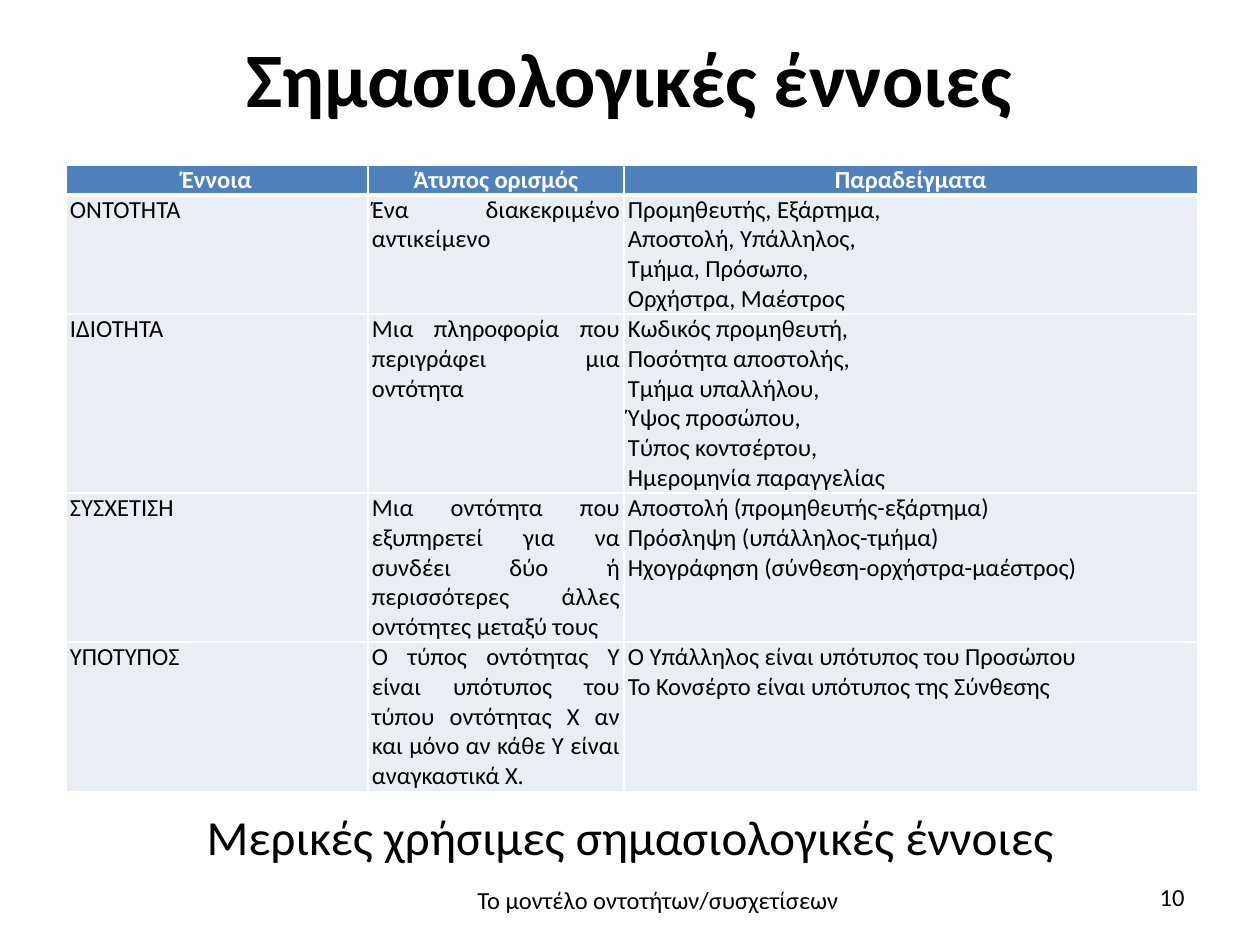
from lxml import etree
from pptx import Presentation
from pptx.dml.color import RGBColor
from pptx.enum.text import MSO_ANCHOR, MSO_AUTO_SIZE, PP_ALIGN
from pptx.oxml.ns import qn
from pptx.util import Pt

CENTER, RIGHT, JUSTIFY = PP_ALIGN.CENTER, PP_ALIGN.RIGHT, PP_ALIGN.JUSTIFY
TOP, MIDDLE = MSO_ANCHOR.TOP, MSO_ANCHOR.MIDDLE
NO_FIT = MSO_AUTO_SIZE.NONE
PX = 914400 // 126

BLACK, WHITE, HEADER_FILL, BODY_FILL = "000000", "FFFFFF", "4F81BD", "E9EDF4"
COL_WIDTHS = [302, 256, 574]
LINE_HEIGHT = 29

HEADERS = ["Έννοια", "Άτυπος ορισμός", "Παραδείγματα"]
CONCEPTS = [
    ("ΟΝΤΟΤΗΤΑ", "Ένα διακεκριμένο αντικείμενο",
     "Προμηθευτής, Εξάρτημα,\nΑποστολή, Υπάλληλος,\nΤμήμα, Πρόσωπο,\nΟρχήστρα, Μαέστρος"),
    ("ΙΔΙΟΤΗΤΑ", "Μια πληροφορία που περιγράφει μια οντότητα",
     "Κωδικός προμηθευτή,\nΠοσότητα αποστολής,\nΤμήμα υπαλλήλου,\nΎψος προσώπου,\n"
     "Τύπος κοντσέρτου,\nΗμερομηνία παραγγελίας"),
    ("ΣΥΣΧΕΤΙΣΗ",
     "Μια οντότητα που εξυπηρετεί για να συνδέει δύο ή περισσότερες άλλες οντότητες μεταξύ τους",
     "Αποστολή (προμηθευτής-εξάρτημα)\nΠρόσληψη (υπάλληλος-τμήμα)\n"
     "Ηχογράφηση (σύνθεση-ορχήστρα-μαέστρος)"),
    ("ΥΠΟΤΥΠΟΣ",
     "Ο τύπος οντότητας Υ είναι υπότυπος του τύπου οντότητας Χ αν και μόνο αν κάθε Υ είναι "
     "αναγκαστικά Χ.",
     "Ο Υπάλληλος είναι υπότυπος του Προσώπου\nΤο Κονσέρτο είναι υπότυπος της Σύνθεσης"),
]
ROW_LINES = [1, 4, 6, 5, 5]


def rgb(value):
    return RGBColor.from_string(value)


class SlideBuilder:
    """Holds the text style and the current slide, and adds elements to it."""

    def __init__(self, slide, font="Calibri"):
        self.s = slide
        self.font = font

    def place(self, sp, box):
        for name, value in zip(("left", "top", "width", "height"), box):
            setattr(sp, name, value * PX)

    def set_text(self, tf, text, size, align, color=BLACK, bold=False, spacing=1.0):
        tf.text = text
        paragraph_format = {"alignment": align, "line_spacing": spacing, "space_before": Pt(0)}
        run_format = {"name": self.font, "size": Pt(size), "bold": bold}
        for p in tf.paragraphs:
            for name, value in paragraph_format.items():
                setattr(p, name, value)
            for r in p.runs:
                for name, value in run_format.items():
                    setattr(r.font, name, value)
                r.font.color.rgb = rgb(color)

    def frame(self, tf, anchor, **margins):
        values = {"word_wrap": True, "auto_size": NO_FIT, "vertical_anchor": anchor, **margins}
        for name, value in values.items():
            setattr(tf, name, value)

    def title(self, text, box):
        sp = self.s.shapes.title
        self.place(sp, box)
        self.frame(sp.text_frame, MIDDLE, margin_left=0, margin_top=2 * PX,
                   margin_right=0, margin_bottom=0)
        self.set_text(sp.text_frame, text, 44, CENTER, bold=True, spacing=0.98)

    def body(self, text, box):
        sp = self.s.placeholders[1]
        self.place(sp, box)
        self.frame(sp.text_frame, TOP)
        self.set_text(sp.text_frame, text, 28, CENTER)
        for p in sp.text_frame.paragraphs:
            pPr = p._p.get_or_add_pPr()
            pPr.set("marL", "0")
            pPr.set("indent", "0")
            etree.SubElement(pPr, qn("a:buNone"))

    def text(self, text, box, align):
        sp = self.s.shapes.add_textbox(*(v * PX for v in box))
        self.frame(sp.text_frame, TOP)
        self.set_text(sp.text_frame, text, 14, align)

    def borders(self, cell, widths):
        tcPr = cell._tc.get_or_add_tcPr()
        for i, (side, width) in enumerate(widths.items()):
            ln = etree.Element(qn(f"a:ln{side}"), w=str(Pt(width)))
            fill = etree.SubElement(ln, qn("a:solidFill"))
            etree.SubElement(fill, qn("a:srgbClr"), val=WHITE)
            tcPr.insert(i, ln)

    def cell(self, cell, text, row):
        header = row == 0
        margins = {"margin_left": 4 * PX, "margin_right": 4 * PX,
                   "margin_top": 0, "margin_bottom": 0}
        for name, value in margins.items():
            setattr(cell, name, value)
        cell.fill.solid()
        cell.fill.fore_color.rgb = rgb(HEADER_FILL if header else BODY_FILL)
        self.borders(cell, {"L": 1, "R": 1, "T": 3 if row == 1 else 1, "B": 3 if header else 1})
        self.set_text(cell.text_frame, text, 14, CENTER if header else JUSTIFY,
                      WHITE if header else BLACK, header)

    def table(self, rows, left, top):
        width, height = sum(COL_WIDTHS), sum(ROW_LINES) * LINE_HEIGHT
        tbl = self.s.shapes.add_table(len(rows), len(COL_WIDTHS), left * PX, top * PX,
                                      width * PX, height * PX).table
        tbl.horz_banding = False
        for col, w in zip(tbl.columns, COL_WIDTHS):
            col.width = w * PX
        for i, (texts, lines) in enumerate(zip(rows, ROW_LINES)):
            tbl.rows[i].height = lines * LINE_HEIGHT * PX
            for j, text in enumerate(texts):
                self.cell(tbl.cell(i, j), text, i)


def main():
    prs = Presentation()
    prs.slide_width, prs.slide_height = 1260 * PX, 945 * PX
    b = SlideBuilder(prs.slides.add_slide(prs.slide_layouts[1]))
    b.title("Σημασιολογικές έννοιες", (63, 0, 1134, 158))
    b.table([HEADERS, *CONCEPTS], 66, 165)
    b.body("Μερικές χρήσιμες σημασιολογικές έννοιες", (63, 800, 1134, 44))
    b.text("Το μοντέλο οντοτήτων/συσχετίσεων", (438, 879, 440, 69), CENTER)
    b.text("10", (903, 876, 294, 50), RIGHT)
    prs.save("out.pptx")


if __name__ == "__main__":
    main()
